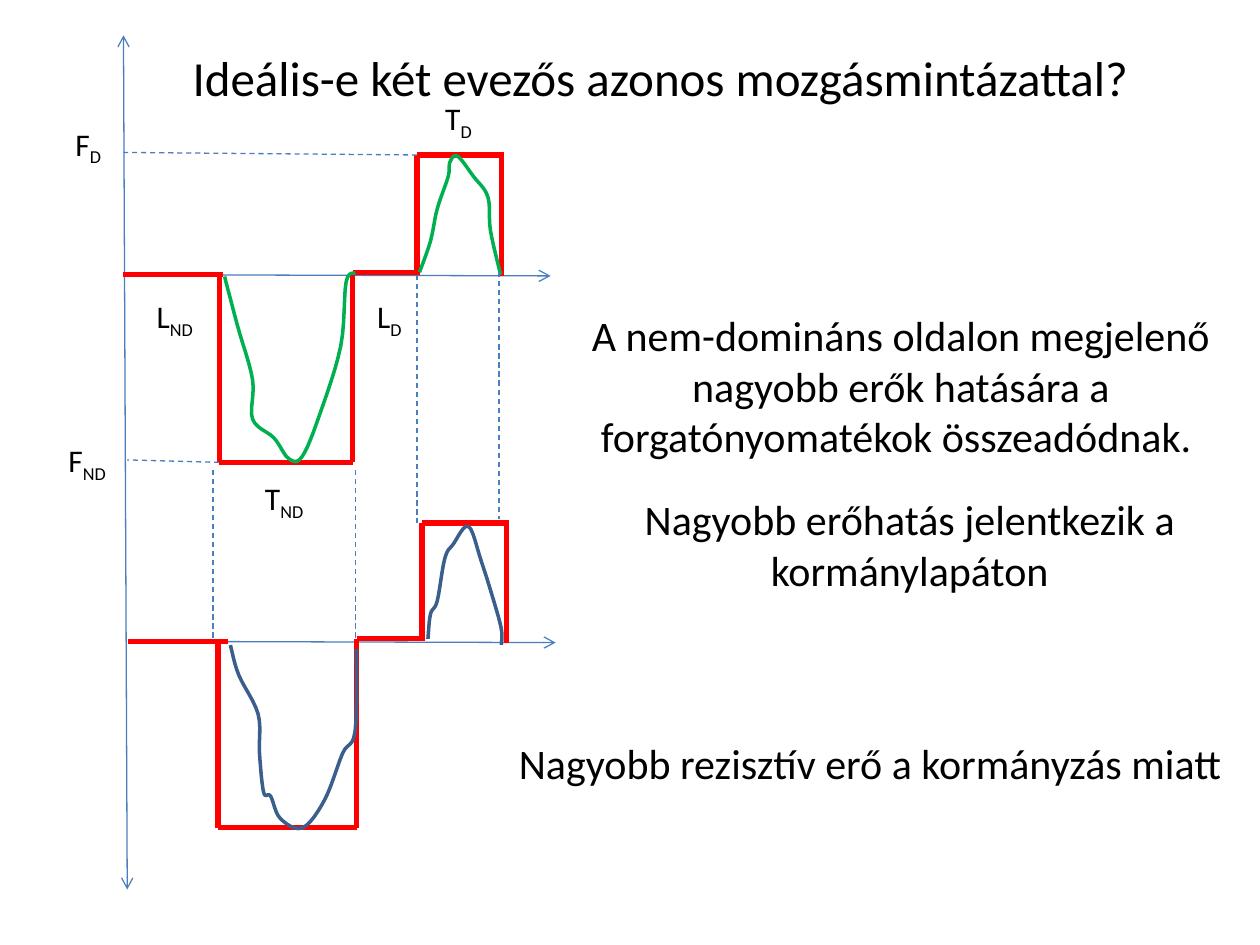
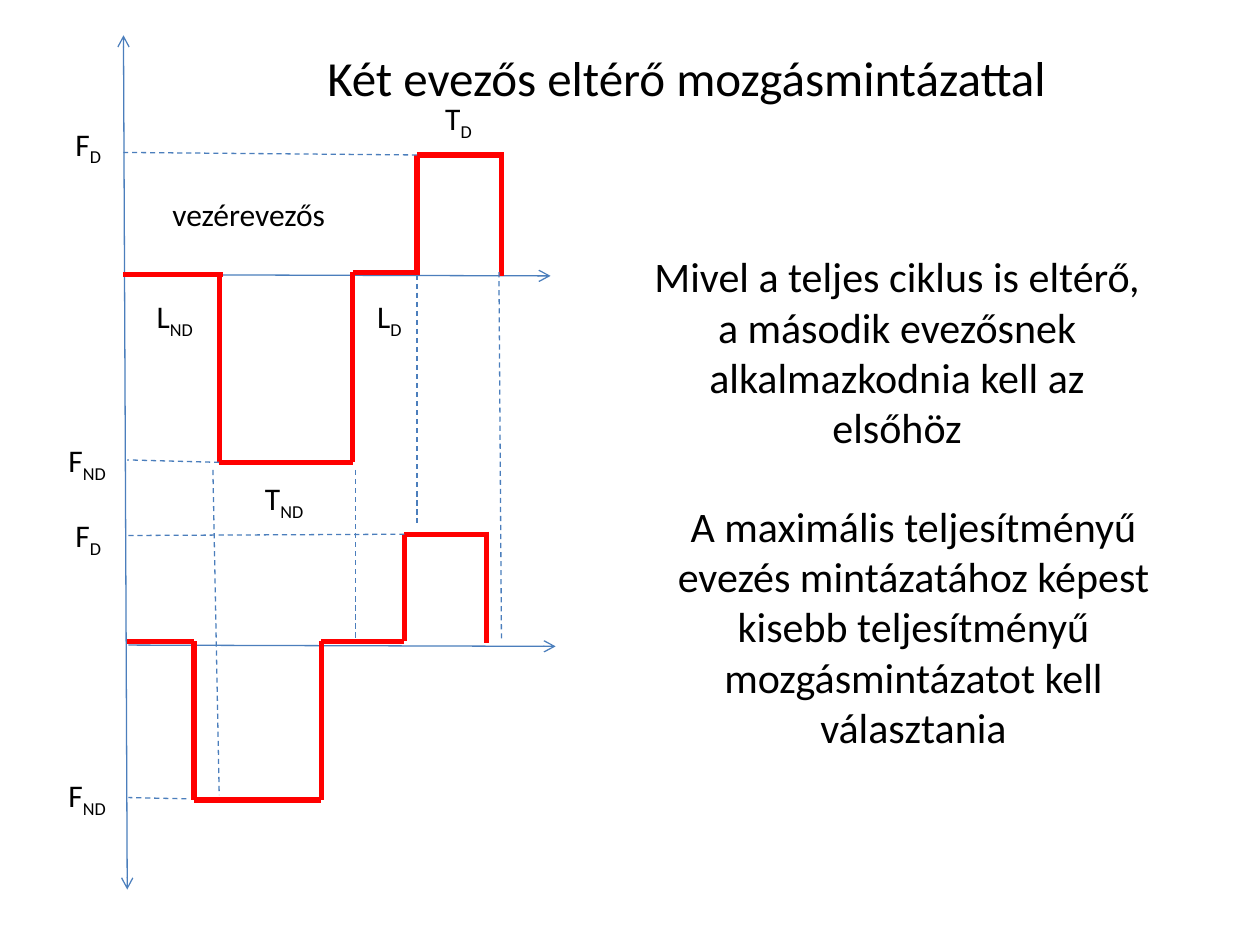
"""Build two slides that compare the force patterns of two rowers."""
from dataclasses import dataclass
from lxml.etree import SubElement
from pptx import Presentation
from pptx.dml.color import RGBColor
from pptx.enum.dml import MSO_LINE
from pptx.enum.shapes import MSO_CONNECTOR
from pptx.enum.text import MSO_AUTO_SIZE, PP_ALIGN
from pptx.oxml.ns import qn
from pptx.util import Inches, Pt

BLACK = RGBColor(0x00, 0x00, 0x00)
WHITE = RGBColor(0xFF, 0xFF, 0xFF)
RED = RGBColor(0xFF, 0x00, 0x00)
BLUE = RGBColor(0x4B, 0x7E, 0xBC)
GREEN = RGBColor(0x00, 0xB0, 0x50)
NAVY = RGBColor(0x3A, 0x5F, 0x8C)

COLS, ROWS = 100, 75
FONT = "Calibri"
TITLE, BODY, SMALL = 28, 24, 18
THIN, CURVE, THICK = 0.75, 2, 3

AXIS_COL, AXIS_TOP, AXIS_END = 9.8, 2.8, 70.6
AXIS_LEAN, TIME_WIDTH = 0.3, 33.9
FORCE_COL = 7.1
LABEL_HIGH, LINE_HIGH, BOX_PAD = 4, 4, 1.1
LABEL_WIDTH = {"D": 4.2, "ND": 5.3}
STEPS = 6


@dataclass
class Cycle:
    """Hold the columns and rows where one stroke cycle changes."""

    begin: float
    pull: float
    back: float
    push: float
    stop: float
    zero: float
    low: float
    rest: float
    high: float
    lap: float = 0

    def edges(self):
        """List the flat edges and then the upright edges."""
        return [
            ((self.begin, self.zero), (self.pull + self.lap, self.zero)),
            ((self.pull, self.low), (self.back, self.low)),
            ((self.back, self.rest), (self.push, self.rest)),
            ((self.push, self.high), (self.stop, self.high)),
            ((self.pull, self.zero), (self.pull, self.low)),
            ((self.back, self.rest), (self.back, self.low)),
            ((self.push, self.high), (self.push, self.zero)),
            ((self.stop, self.high - 0.2), (self.stop, self.zero + 0.1)),
        ]

    def trace(self, knots, left, right, peak):
        """Scale knots, given as shares of a block, to grid points."""
        return [(left + (right - left) * across,
                 self.zero + (peak - self.zero) * force)
                for across, force in knots]

    def curves(self, pull, push):
        """Fit one force curve in each of the two blocks."""
        return [self.trace(pull, self.pull, self.back, self.low),
                self.trace(push, self.push, self.stop, self.high)]


LEAD = Cycle(begin=9.8, pull=17.4, back=28, push=33.1, stop=39.8,
             zero=21.8, low=36.7, rest=21.6, high=12.3, lap=0.3)
TWIN = Cycle(begin=10.2, pull=17.3, back=28.3, push=33.5, stop=40.2,
             zero=50.9, low=65.7, rest=50.7, high=41.5, lap=0.8)
OTHER = Cycle(begin=10.1, pull=15.4, back=25.5, push=32.1, stop=38.6,
              zero=50.9, low=63.5, rest=50.9, high=42.4)

LEAD_PULL = [(.04, .01), (.14, .28), (.25, .56), (.25, .77), (.41, .87),
             (.52, .98), (.62, .97), (.75, .75), (.91, .38), (.95, .04),
             (1.02, -.01)]
LEAD_PUSH = [(.03, .02), (.16, .28), (.24, .55), (.37, .82), (.39, .94),
             (.48, .99), (.67, .82), (.84, .65), (.87, .37), (.99, 0)]
TWIN_PULL = [(.09, .02), (.15, .18), (.29, .39), (.3, .6), (.33, .81),
             (.38, .83), (.45, .95), (.61, 1), (.77, .85), (.9, .6),
             (.99, .48), (1, .04)]
TWIN_PUSH = [(.07, .02), (.1, .23), (.18, .34), (.27, .7), (.37, .82),
             (.55, .97), (.7, .68), (.85, .34), (.94, .1), (.94, -.03)]


def blend(a, b, c, d, t):
    """Give the Catmull-Rom value between b and c at share t."""
    return b + t / 2 * (c - a + t * (2 * a - 5 * b + 4 * c - d
                                     + t * (3 * (b - c) + d - a)))


def smooth(knots):
    """Return the points of a smooth curve through the knots."""
    ends = [knots[0], *knots, knots[-1]]
    spans = zip(ends, ends[1:], ends[2:], ends[3:])
    points = [tuple(blend(*axis, step / STEPS) for axis in zip(*span))
              for span in spans for step in range(STEPS)]
    return points + [knots[-1]]


class Board:
    """Hold the deck's style and draw on the current slide in grid units."""

    def __init__(self):
        """Open a deck of the right size."""
        self.deck = Presentation()
        self.deck.slide_width = Inches(10)
        self.deck.slide_height = Inches(7.5)

    def place(self, col, row):
        """Turn a grid point into slide lengths."""
        return (round(self.deck.slide_width * col / COLS),
                round(self.deck.slide_height * row / ROWS))

    def start(self):
        """Open a blank slide."""
        self.slide = self.deck.slides.add_slide(self.deck.slide_layouts[6])
        fill = self.slide.background.fill
        fill.solid()
        fill.fore_color.rgb = WHITE

    def line(self, start, end, color=BLUE, width=THIN, dash=False, tips=()):
        """Draw a straight line with optional dashes and arrow tips."""
        link = self.slide.shapes.add_connector(
            MSO_CONNECTOR.STRAIGHT, *self.place(*start), *self.place(*end))
        link.line.color.rgb = color
        link.line.width = Pt(width)
        if dash:
            link.line.dash_style = MSO_LINE.DASH
        frame = link._element.spPr
        for tip in tips:
            SubElement(frame.find(qn("a:ln")), qn(tip), type="arrow")
        SubElement(frame, qn("a:effectLst"))

    def guide(self, start, end):
        """Draw a dashed guide line."""
        self.line(start, end, dash=True)

    def force(self):
        """Draw the upright force axis."""
        self.line((AXIS_COL, AXIS_TOP), (AXIS_COL + AXIS_LEAN, AXIS_END),
                  tips=["a:headEnd", "a:tailEnd"])

    def time(self, left, row):
        """Draw a time axis that leans down slightly."""
        self.line((left, row), (left + TIME_WIDTH, row + 0.1),
                  tips=["a:tailEnd"])

    def wave(self, cycle):
        """Draw the red block pattern of one stroke cycle."""
        for start, end in cycle.edges():
            self.line(start, end, color=RED, width=THICK)

    def curve(self, knots, color):
        """Draw a smooth open curve through the knots."""
        first, *rest = [self.place(*point) for point in smooth(knots)]
        pen = self.slide.shapes.build_freeform(*first)
        pen.add_line_segments(rest, close=False)
        shape = pen.convert_to_shape()
        shape.shadow.inherit = False
        shape.fill.background()
        shape.line.color.rgb = color
        shape.line.width = Pt(CURVE)

    def text(self, runs, size, mid, top, width, height, wrap=False):
        """Add a text box about a middle column, run by run."""
        shape = self.slide.shapes.add_textbox(
            *self.place(mid - width / 2, top), *self.place(width, height))
        frame = shape.text_frame
        frame.word_wrap = wrap
        frame.auto_size = MSO_AUTO_SIZE.SHAPE_TO_FIT_TEXT
        para = frame.paragraphs[0]
        para.alignment = PP_ALIGN.CENTER if wrap else PP_ALIGN.LEFT
        for words, lower in runs:
            run = para.add_run()
            run.text = words
            run.font.name = FONT
            run.font.size = Pt(size)
            run.font.color.rgb = BLACK
            if lower:
                run.font._element.set("baseline", "-25000")

    def title(self, words, mid, width):
        """Add the slide's title."""
        self.text([(words, False)], TITLE, mid, top=3.3, width=width,
                  height=5.7)

    def note(self, words, mid, top, width, lines):
        """Add a remark that fills the given number of lines."""
        self.text([(words, False)], BODY, mid, top, width,
                  height=lines * LINE_HIGH + BOX_PAD, wrap=lines > 1)

    def label(self, sign, side, mid, row):
        """Centre a symbol with its subscript on a grid point."""
        self.text([(sign, False), (side, True)], SMALL, mid,
                  row - LABEL_HIGH / 2, LABEL_WIDTH[side], LABEL_HIGH)

    def forces(self, cycle, high, low):
        """Label both force levels, moved by the given rows."""
        self.label("F", "D", FORCE_COL, cycle.high + high)
        self.label("F", "ND", FORCE_COL, cycle.low + low)

    def spans(self, cycle):
        """Label the four time spans of a cycle."""
        below = cycle.zero + 3.3
        for sign, side, left, right, row in [
                ("L", "ND", cycle.begin + 0.5, cycle.pull + 0.5, below),
                ("L", "D", cycle.back + 0.5, cycle.push + 0.5, below),
                ("T", "ND", cycle.pull, cycle.back, cycle.low + 2.8),
                ("T", "D", cycle.push, cycle.stop, cycle.high - 2.9)]:
            self.label(sign, side, (left + right) / 2, row)

    def drops(self, pull, stop):
        """Draw guides from the lead cycle down to the lower chart."""
        under = LEAD.low + 0.6
        for start, end in [
                ((LEAD.pull - 0.5, under), pull),
                ((LEAD.back + 0.2, under), (LEAD.back + 0.2, TWIN.rest)),
                ((LEAD.push, LEAD.zero), (LEAD.push, TWIN.high)),
                ((LEAD.stop - 0.2, LEAD.rest), stop)]:
            self.guide(start, end)

    def lead(self):
        """Draw the force axis and the first rower's labelled pattern."""
        self.force()
        self.time(AXIS_COL, LEAD.zero)
        self.wave(LEAD)
        self.spans(LEAD)
        self.forces(LEAD, high=-0.9, low=-0.2)
        self.guide((LEAD.push, LEAD.high), (AXIS_COL, LEAD.high - 0.2))
        self.guide((LEAD.pull, LEAD.low), (AXIS_COL + 0.3, LEAD.low - 0.2))


def same(board):
    """Draw the slide on two rowers with the same pattern."""
    board.start()
    board.lead()
    for knots in LEAD.curves(LEAD_PULL, LEAD_PUSH):
        board.curve(knots, GREEN)
    board.time(TWIN.begin, TWIN.zero)
    board.wave(TWIN)
    board.drops(pull=(LEAD.pull - 0.5, TWIN.rest),
                stop=(LEAD.stop - 0.2, TWIN.high - 0.3))
    board.title("Ideális-e két evezős azonos mozgásmintázattal?",
                mid=52.85, width=77.1)
    board.note("A nem-domináns oldalon megjelenő nagyobb erők hatására a "
               "forgatónyomatékok összeadódnak. ",
               mid=71.5, top=24.1, width=54.8, lines=3)
    board.note("Nagyobb erőhatás jelentkezik a kormánylapáton",
               mid=72.2, top=38.7, width=54.8, lines=2)
    board.note("Nagyobb rezisztív erő a kormányzás miatt",
               mid=69.35, top=58, width=58.3, lines=1)
    for knots in TWIN.curves(TWIN_PULL, TWIN_PUSH):
        board.curve(knots, NAVY)


def differ(board):
    """Draw the slide on two rowers with different patterns."""
    board.start()
    board.lead()
    board.time(OTHER.begin + 0.1, OTHER.zero + 0.3)
    board.wave(OTHER)
    board.drops(pull=(LEAD.pull, OTHER.low - 0.4),
                stop=(LEAD.stop, OTHER.zero))
    board.guide((OTHER.push, OTHER.high), (OTHER.begin, OTHER.high + 0.1))
    board.guide((OTHER.pull - 0.6, OTHER.low - 0.1),
                (OTHER.begin + 0.1, OTHER.low - 0.2))
    board.forces(OTHER, high=0.1, low=-0.4)
    board.title("Két evezős eltérő mozgásmintázattal", mid=54.8, width=59.6)
    board.note("Mivel a teljes ciklus is eltérő, a második evezősnek "
               "alkalmazkodnia kell az elsőhöz",
               mid=71.2, top=19.4, width=42.4, lines=4)
    board.note("A maximális teljesítményű evezés mintázatához képest kisebb "
               "teljesítményű mozgásmintázatot kell választania",
               mid=72.5, top=39.2, width=44.6, lines=5)
    board.text([("vezérevezős", False)], SMALL, mid=19.85, top=15,
               width=14.3, height=LABEL_HIGH)


def main():
    """Build both slides and save the deck."""
    board = Board()
    same(board)
    differ(board)
    board.deck.save("out.pptx")


if __name__ == "__main__":
    main()
